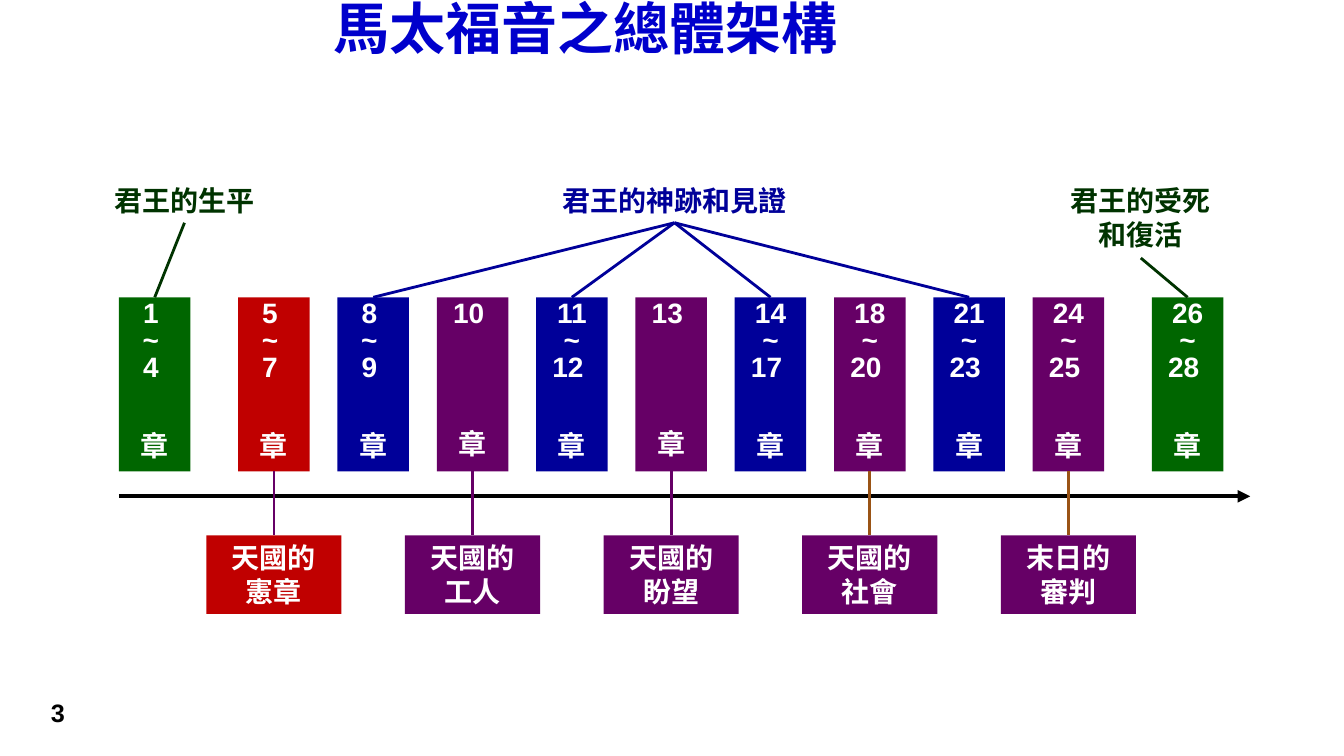
from lxml import etree
from pptx import Presentation
from pptx import util as u
from pptx.dml.color import RGBColor
from pptx.enum import shapes, text
from pptx.oxml import ns

COLOURS = {
    "title": "0000CC", "white": "FFFFFF", "black": "000000",
    "green": "006600", "forest": "003300", "red": "C00000",
    "navy": "000099", "purple": "660066", "brown": "9A5315",
}
LATIN, CHINESE = "Arial", "Noto Sans CJK SC"
WIDTH, HEIGHT = 13.33, 7.5
COLUMN = 0.985
BAR_WIDTH = 0.71
CALLOUT_WIDTH = 1.34
LINE = 18.5

BARS = [
    (0, "green", "1 \n~ \n4 "),
    (1.2, "red", "5 \n~ \n7 "),
    (2.2, "navy", "8 \n~ \n9 "),
    (3.2, "purple", "10 "),
    (4.2, "navy", "11 ~ 12 "),
    (5.2, "purple", "13 "),
    (6.2, "navy", "14 ~ 17 "),
    (7.2, "purple", "18 ~ 20 "),
    (8.2, "navy", "21 ~ 23 "),
    (9.2, "purple", "24 ~ 25 "),
    (10.4, "green", "26 ~ 28 "),
]
LABELS = [
    (-0.2, 1.7, 0.44, "forest", "君王的生平", [0]),
    (4.13, 2.76, 0.44, "navy", "君王的神跡和見證", [2, 4, 6, 8]),
    (9.25, 1.77, 0.79, "forest", "君王的受死\n和復活", [10]),
]
CALLOUTS = [
    (1, "red", "purple", "天國的\n憲章"),
    (3, "purple", "purple", "天國的\n工人"),
    (5, "purple", "purple", "天國的\n盼望"),
    (7, "purple", "brown", "天國的\n社會"),
    (9, "purple", "brown", "末日的\n審判"),
]


def colour(name):
    return RGBColor.from_string(COLOURS[name])


def inches(*lengths):
    return [u.Inches(length) for length in lengths]


def write(shape, words, size, tint, face=CHINESE, anchor=text.MSO_ANCHOR.TOP):
    frame = shape.text_frame
    frame.text = words
    frame.word_wrap = True
    frame.auto_size = text.MSO_AUTO_SIZE.NONE
    frame.vertical_anchor = anchor
    for para in frame.paragraphs:
        para.alignment = text.PP_ALIGN.CENTER
        for span in para.runs:
            span.font.size = u.Pt(size)
            span.font.bold = True
            span.font.color.rgb = colour(tint)
            span.font.name = face
            east_asian = etree.SubElement(span.font._element, ns.qn("a:ea"))
            east_asian.set("typeface", CHINESE)
    return frame


def add_block(page, box, fill):
    block = page.shapes.add_shape(shapes.MSO_SHAPE.RECTANGLE, *inches(*box))
    block.shadow.inherit = False
    block.fill.solid()
    block.fill.fore_color.rgb = colour(fill)
    block.line.fill.background()
    return block


def add_line(page, tint, weight, ends=(0, 0, 0, 0)):
    line = page.shapes.add_connector(shapes.MSO_CONNECTOR.STRAIGHT, *inches(*ends))
    line.line.color.rgb = colour(tint)
    line.line.width = u.Pt(weight)
    etree.SubElement(line._element.spPr, ns.qn("a:effectLst"))
    return line


def join(page, upper, lower, tint):
    line = add_line(page, tint, 2)
    line.begin_connect(upper, 2)
    line.end_connect(lower, 0)


def add_title(page, box):
    title = page.shapes.title
    title.left, title.top, title.width, title.height = inches(*box)
    frame = write(title, "馬太福音之總體架構", 40, "title", anchor=text.MSO_ANCHOR.MIDDLE)
    frame.margin_top = 0
    frame.margin_right = u.Inches(box[2] * 0.22)
    frame.margin_bottom = u.Inches(box[3] * 0.82)


def add_page_number(page, box):
    number = page.shapes.add_textbox(*inches(*box))
    write(number, "3", 18, "black", LATIN, text.MSO_ANCHOR.MIDDLE)


def add_axis(page, left, top, width):
    axis = add_line(page, "black", 3, (left, top, left + width, top))
    etree.SubElement(axis.line._get_or_add_ln(), ns.qn("a:tailEnd"), type="triangle")


def add_bars(page, left, top, height):
    bars = []
    for column, fill, chapters in BARS:
        bar = add_block(page, (left + column * COLUMN, top, BAR_WIDTH, height), fill)
        frame = write(bar, chapters + "\n章", 20, "white", LATIN)
        for para in frame.paragraphs:
            para.line_spacing = 0.8
        blank_lines = 2 if "~" in chapters else 4
        frame.paragraphs[-1].space_before = u.Pt(blank_lines * LINE)
        bars.append(bar)
    return bars


def add_labels(page, left, top, bars):
    for offset, width, height, tint, words, targets in LABELS:
        label = page.shapes.add_textbox(*inches(left + offset, top, width, height))
        write(label, words, 20, tint)
        for target in targets:
            join(page, label, bars[target], tint)


def add_callouts(page, left, top, height, bars):
    inset = (BAR_WIDTH - CALLOUT_WIDTH) / 2
    for index, fill, tint, words in CALLOUTS:
        start = left + BARS[index][0] * COLUMN + inset
        callout = add_block(page, (start, top, CALLOUT_WIDTH, height), fill)
        write(callout, words, 20, "white")
        join(page, bars[index], callout, tint)


def build_timeline(page, box):
    left, top, width, height = box
    add_axis(page, left, top + 0.73 * height, width)
    bars = add_bars(page, left, top + 0.273 * height, 0.4 * height)
    add_labels(page, left, top, bars)
    add_callouts(page, left, top + 0.82 * height, 0.18 * height, bars)


def main():
    deck = Presentation()
    deck.slide_width, deck.slide_height = inches(WIDTH, HEIGHT)
    page = deck.slides.add_slide(deck.slide_layouts[5])
    add_title(page, (3.15, 0.2, 6.69, 0.79))
    add_page_number(page, (0.2, 6.81, 0.75, 0.51))
    build_timeline(page, (1.18, 1.77, 11.22, 4.32))
    deck.save("out.pptx")


if __name__ == "__main__":
    main()
